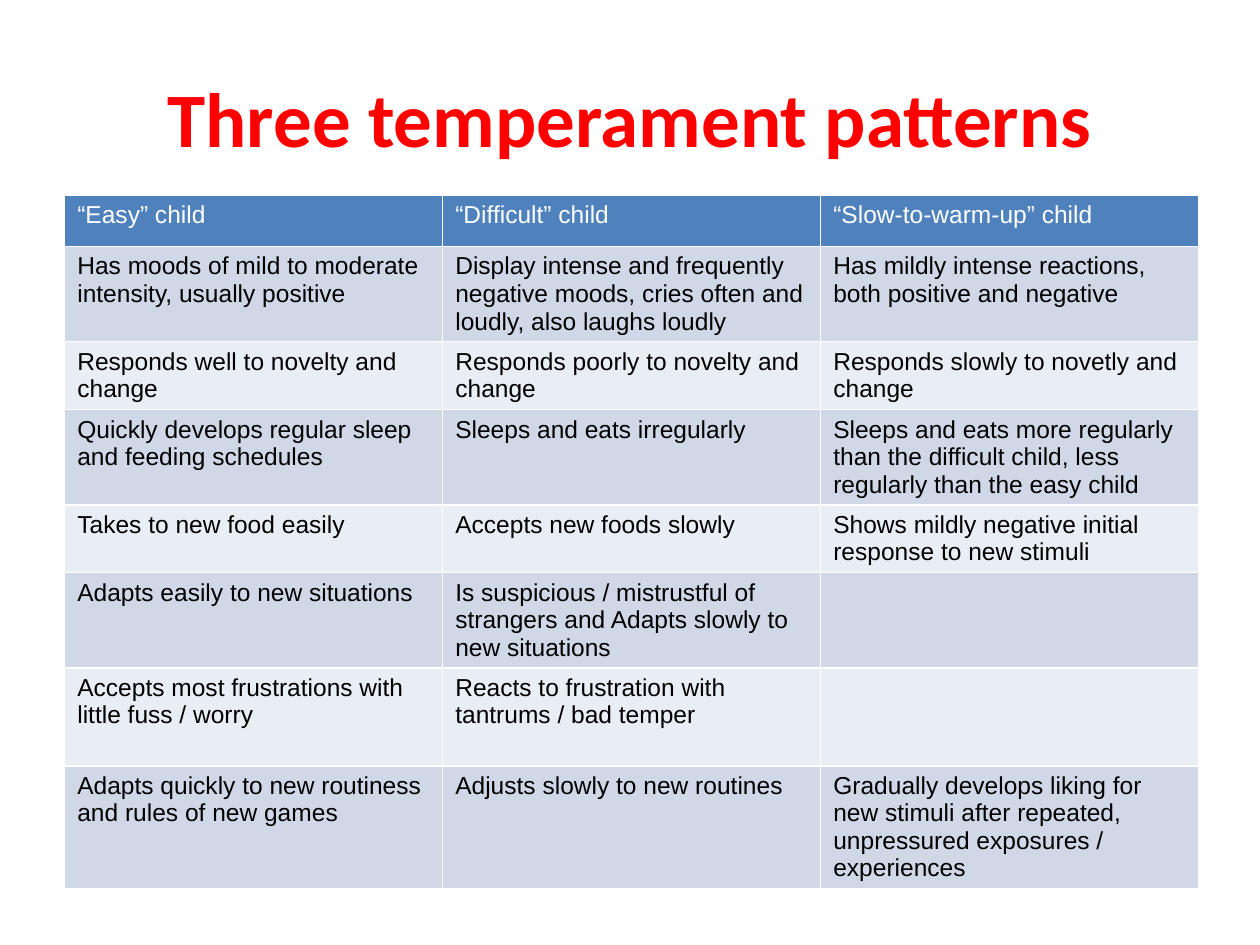
"""Build a slide with a table comparing three temperament patterns in children."""
from pptx import Presentation
from pptx.dml.color import RGBColor
from pptx.enum.text import MSO_ANCHOR, PP_ALIGN
from pptx.util import Pt

TITLE = "Three temperament patterns"
ROWS = [
    ("“Easy” child", "“Difficult” child", "“Slow-to-warm-up” child"),
    ("Has moods of mild to moderate intensity, usually positive",
     "Display intense and frequently negative moods, cries often and loudly, also laughs loudly",
     "Has mildly intense reactions, both positive and negative"),
    ("Responds well to novelty and change",
     "Responds poorly to novelty and change",
     "Responds slowly to novetly and change"),
    ("Quickly develops regular sleep and feeding schedules",
     "Sleeps and eats irregularly",
     "Sleeps and eats more regularly than the difficult child, less regularly than the easy child"),
    ("Takes to new food easily",
     "Accepts new foods slowly",
     "Shows mildly negative initial response to new stimuli"),
    ("Adapts easily to new situations",
     "Is suspicious / mistrustful of strangers and Adapts slowly to new situations",
     ""),
    ("Accepts most frustrations with little fuss / worry",
     "Reacts to frustration with tantrums / bad temper",
     ""),
    ("Adapts quickly to new routiness and rules of new games",
     "Adjusts slowly to new routines",
     "Gradually develops liking for new stimuli after repeated, unpressured exposures / experiences"),
]
ROW_HEIGHTS = [29.2, 54.5, 38.6, 54.5, 38.6, 54.5, 56, 69.5]
COLUMN_WIDTH = 216

RED = RGBColor(0xFF, 0x00, 0x00)
WHITE = RGBColor(0xFF, 0xFF, 0xFF)
BLACK = RGBColor(0x00, 0x00, 0x00)
HEADER_BLUE = RGBColor(0x4F, 0x81, 0xBD)
BANDS = [RGBColor(0xE9, 0xED, 0xF4), RGBColor(0xD0, 0xD8, 0xE8)]


def style_font(font, name, size, color, bold):
    font.name = name
    font.size = Pt(size)
    font.color.rgb = color
    font.bold = bold


def add_title(page):
    title = page.shapes.title
    title.left, title.top, title.width, title.height = Pt(36), Pt(21.6), Pt(648), Pt(90)
    frame = title.text_frame
    frame.text = TITLE
    frame.vertical_anchor = MSO_ANCHOR.MIDDLE
    para = frame.paragraphs[0]
    para.alignment = PP_ALIGN.CENTER
    style_font(para.runs[0].font, "Calibri", 44, RED, True)


def add_patterns_table(page):
    columns = len(ROWS[0])
    table = page.shapes.add_table(
        len(ROWS), columns, Pt(37), Pt(111.6),
        Pt(COLUMN_WIDTH * columns), Pt(sum(ROW_HEIGHTS))).table
    for column in table.columns:
        column.width = Pt(COLUMN_WIDTH)
    for index, (texts, height) in enumerate(zip(ROWS, ROW_HEIGHTS)):
        row = table.rows[index]
        row.height = Pt(height)
        is_header = index == 0
        for cell, text in zip(row.cells, texts):
            cell.fill.solid()
            cell.fill.fore_color.rgb = HEADER_BLUE if is_header else BANDS[index % 2]
            if text:
                cell.text_frame.text = text
                span = cell.text_frame.paragraphs[0].runs[0]
                style_font(span.font, "Arial", 14, WHITE if is_header else BLACK, False)


def main():
    deck = Presentation()
    deck.slide_width, deck.slide_height = Pt(720), Pt(540)
    page = deck.slides.add_slide(deck.slide_layouts[5])
    add_title(page)
    add_patterns_table(page)
    deck.save("out.pptx")


if __name__ == "__main__":
    main()
